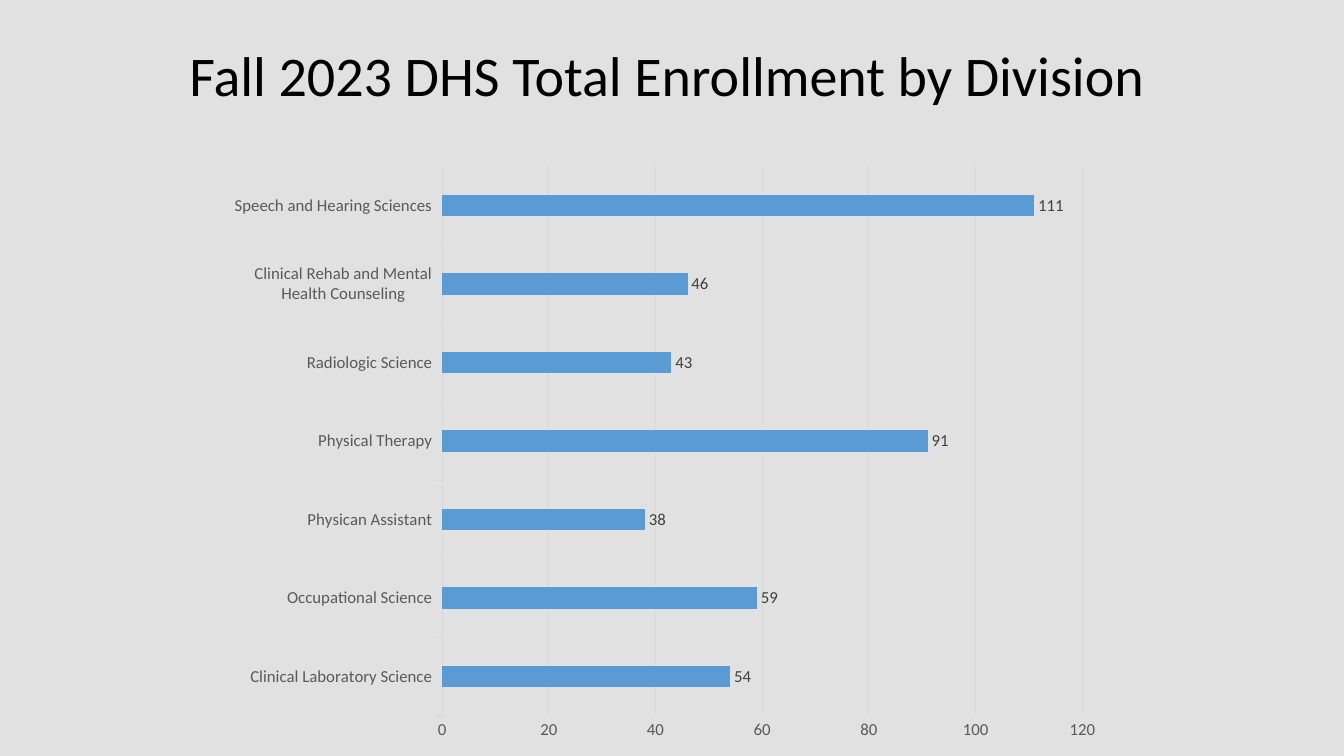
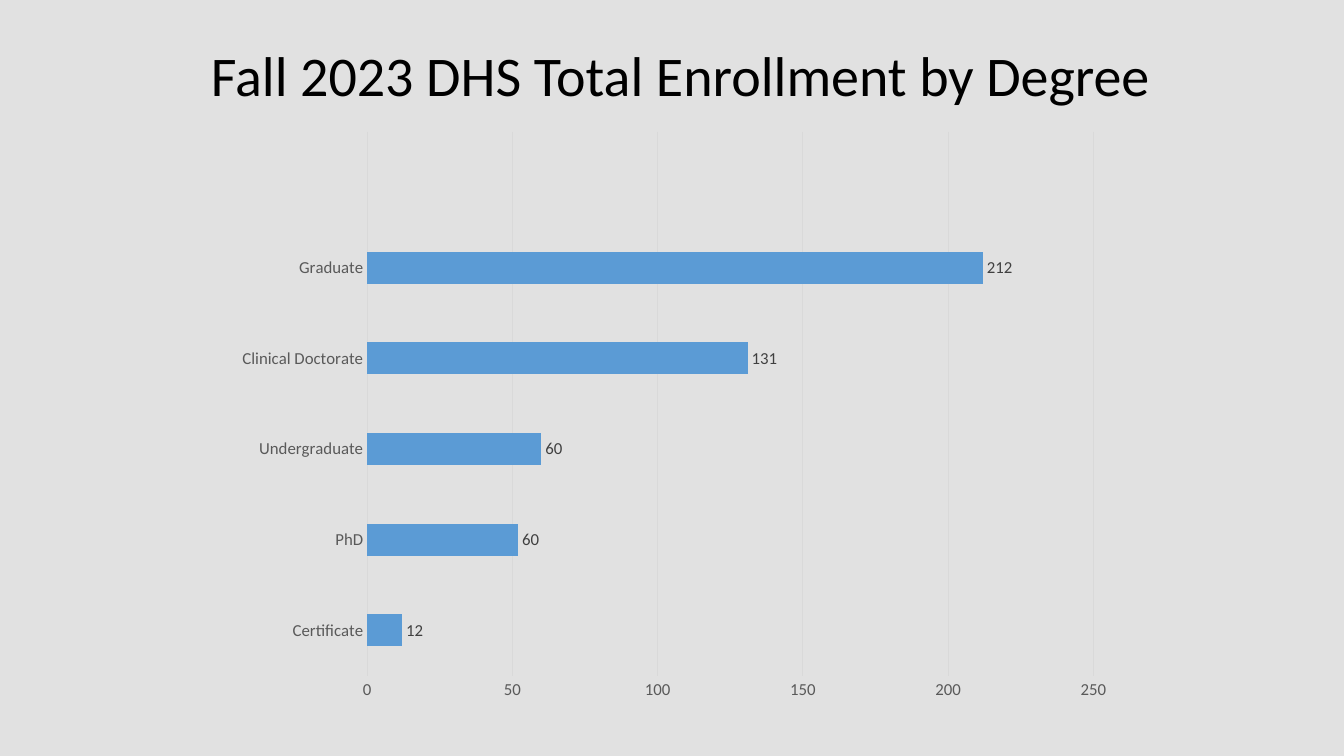
from dataclasses import dataclass, field

from lxml.etree import SubElement
from pptx import Presentation
from pptx.chart.chart import Chart
from pptx.chart.data import CategoryChartData as Data
from pptx.dml.color import RGBColor as Rgb
from pptx.enum.chart import XL_CHART_TYPE as Kind
from pptx.enum.chart import XL_LABEL_POSITION as Spot
from pptx.enum.chart import XL_TICK_MARK as Tick
from pptx.enum.text import MSO_AUTO_SIZE as Fit
from pptx.enum.text import PP_ALIGN as Align
from pptx.oxml.ns import qn
from pptx.util import Inches, Pt


@dataclass(frozen=True)
class Theme:
    face: str = "Calibri"
    back: Rgb = Rgb.from_string("E1E1E1")
    ink: Rgb = Rgb.from_string("000000")
    axis: Rgb = Rgb.from_string("595959")
    label: Rgb = Rgb.from_string("404040")
    grid: Rgb = Rgb.from_string("D9D9D9")
    bar: Rgb = Rgb.from_string("5B9BD5")
    head: Pt = Pt(40)
    base: Pt = Pt(10)
    small: Pt = Pt(12)
    rule: Pt = Pt(0.75)


@dataclass(frozen=True)
class Page:
    title: str
    title_x: float
    title_w: float
    chart_x: float
    chart_y: float
    rows: list[tuple[str, int | None]]
    top: int
    step: int
    gap: int
    lap: int = 0
    tick: Tick = Tick.NONE
    plot: dict[str, float] = field(default_factory=dict)
    notes: dict[int, str] = field(default_factory=dict)


THEME = Theme()

PAGES = [
    Page(
        "Fall 2023 DHS Total Enrollment by Division ",
        0.73, 11.89, 2.15, 1.53,
        [
            ("Clinical Laboratory Science", 54),
            ("Occupational Science", 59),
            ("Physican Assistant", 38),
            ("Physical Therapy", 91),
            ("Radiologic Science", 43),
            ("Clinical Rehab and Mental Health Counseling", 46),
            ("Speech and Hearing Sciences", 111),
        ],
        top=120, step=20, gap=269, lap=-50, tick=Tick.OUTSIDE,
    ),
    Page(
        "Fall 2023 DHS Total Enrollment by Degree ",
        0.82, 11.98, 2.22, 1.13,
        [
            ("Certificate", 12),
            ("PhD", 52),
            ("Undergraduate", 60),
            ("Clinical Doctorate", 131),
            ("Graduate", 212),
            ("", None),
        ],
        top=250, step=50, gap=182,
        plot={"x": 0.16, "y": 0.03, "w": 0.81, "h": 0.91},
        notes={1: "60"},
    ),
]


def style(font, size: Pt, color: Rgb) -> None:
    font.name = THEME.face
    font.size = size
    font.color.rgb = color


def rule(line) -> None:
    line.color.rgb = THEME.grid
    line.width = THEME.rule


def add_title(slide, page: Page) -> None:
    box = slide.shapes.add_textbox(
        Inches(page.title_x), Inches(0.35), Inches(page.title_w), Inches(0.77)
    )
    frame = box.text_frame
    frame.word_wrap = True
    frame.auto_size = Fit.SHAPE_TO_FIT_TEXT
    para = frame.paragraphs[0]
    para.text = page.title
    para.alignment = Align.CENTER
    style(para.font, THEME.head, THEME.ink)


def set_plot(chart: Chart, sides: dict[str, float]) -> None:
    area = chart.element.find(f".//{qn('c:plotArea')}")
    for old in area.findall(qn("c:layout")):
        area.remove(old)
    layout = SubElement(area, qn("c:layout"))
    area.insert(0, layout)
    manual = SubElement(layout, qn("c:manualLayout"))
    parts = {"layoutTarget": "inner", "xMode": "edge", "yMode": "edge", **sides}
    for name, value in parts.items():
        SubElement(manual, qn(f"c:{name}")).set("val", str(value))


def set_axes(chart: Chart, page: Page) -> None:
    cat, val = chart.category_axis, chart.value_axis
    for axis in (cat, val):
        style(axis.tick_labels.font, THEME.small, THEME.axis)
        axis.minor_tick_mark = Tick.NONE
    cat.major_tick_mark = page.tick
    cat.has_major_gridlines = False
    rule(cat.format.line)
    val.major_tick_mark = Tick.NONE
    val.minimum_scale = 0
    val.maximum_scale = page.top
    val.major_unit = page.step
    val.format.line.fill.background()
    val.has_major_gridlines = True
    rule(val.major_gridlines.format.line)


def set_bars(chart: Chart, page: Page) -> None:
    plot = chart.plots[0]
    plot.gap_width = page.gap
    plot.overlap = page.lap
    plot.vary_by_categories = False
    bars = plot.series[0]
    bars.format.fill.solid()
    bars.format.fill.fore_color.rgb = THEME.bar
    labels = bars.data_labels
    labels.show_value = True
    labels.position = Spot.OUTSIDE_END
    style(labels.font, THEME.small, THEME.label)
    for index, text in page.notes.items():
        label = bars.points[index].data_label
        para = label.text_frame.paragraphs[0]
        run = para.add_run()
        run.text = text
        style(run.font, THEME.small, THEME.label)
        label.position = Spot.OUTSIDE_END


def add_bars(slide, page: Page) -> None:
    names, values = zip(*page.rows)
    data = Data()
    data.categories = names
    data.add_series("Series 1", values)
    chart = slide.shapes.add_chart(
        Kind.BAR_CLUSTERED,
        Inches(page.chart_x), Inches(page.chart_y), Inches(8.89), Inches(5.93),
        data,
    ).chart
    chart.has_title = False
    chart.has_legend = False
    style(chart.font, THEME.base, THEME.ink)
    set_axes(chart, page)
    set_bars(chart, page)
    if page.plot:
        set_plot(chart, page.plot)


def main() -> None:
    deck = Presentation()
    deck.slide_width, deck.slide_height = Inches(13.33), Inches(7.5)
    fill = deck.slide_master.background.fill
    fill.solid()
    fill.fore_color.rgb = THEME.back
    for page in PAGES:
        slide = deck.slides.add_slide(deck.slide_layouts[6])
        add_title(slide, page)
        add_bars(slide, page)
    deck.save("out.pptx")


if __name__ == "__main__":
    main()
